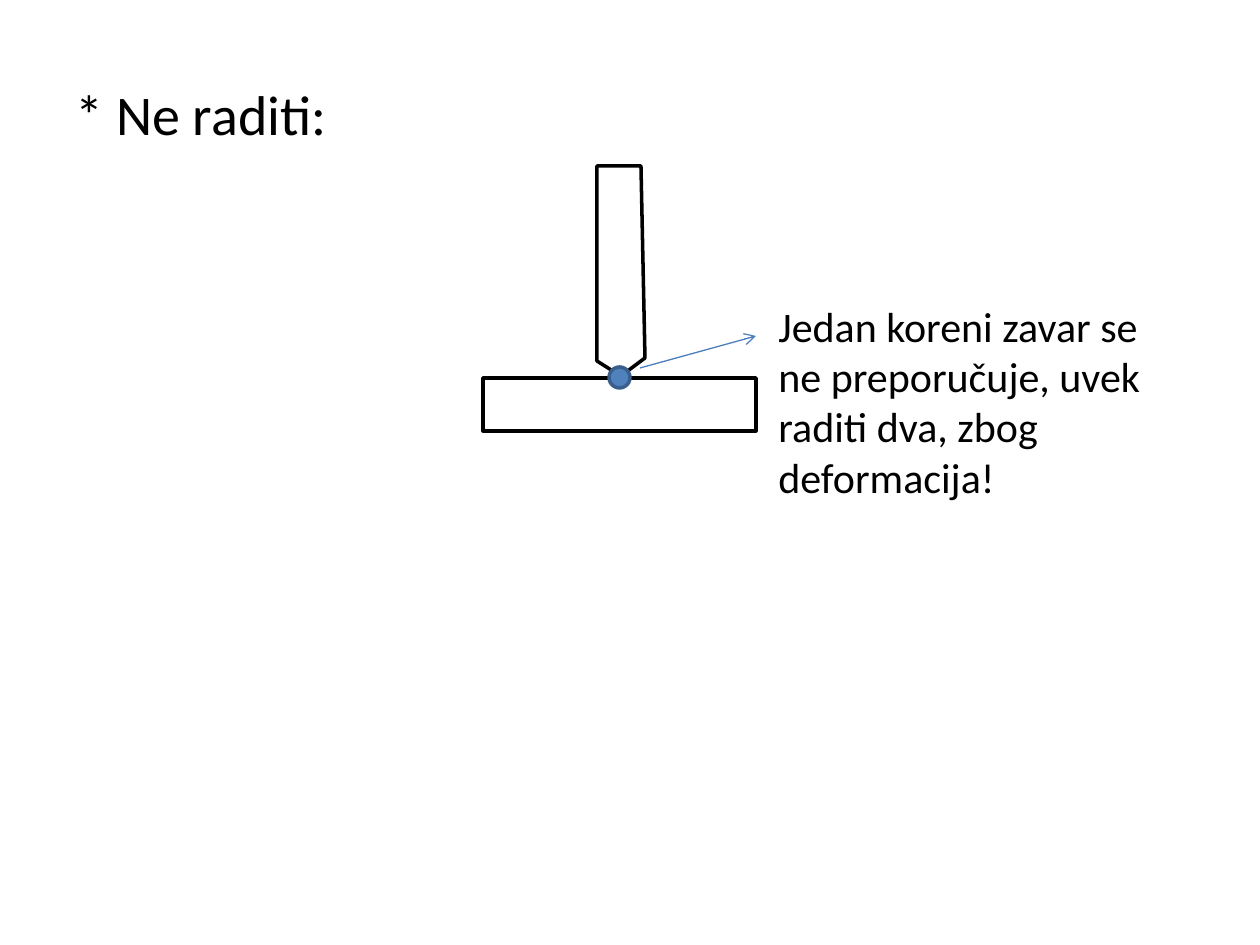
from typing import NamedTuple

from lxml.etree import SubElement
from pptx import Presentation
from pptx.dml.color import RGBColor
from pptx.enum.shapes import MSO_CONNECTOR as Connector, MSO_SHAPE as Preset
from pptx.enum.text import MSO_AUTO_SIZE as AutoSize
from pptx.oxml.ns import qn
from pptx.util import Emu, Pt

PX = 914400 / 126
FONT = "Calibri"
BLACK = RGBColor(0x00, 0x00, 0x00)
WHITE = RGBColor(0xFF, 0xFF, 0xFF)
BLUE = RGBColor(0x4F, 0x81, 0xBD)
DARK_BLUE = RGBColor(0x3A, 0x5F, 0x8C)
ARROW_BLUE = RGBColor(0x4B, 0x7E, 0xBC)


class Box(NamedTuple):
    left: int
    top: int
    width: int
    height: int


class Part(NamedTuple):
    preset: Preset
    box: Box
    fill: RGBColor
    line: RGBColor


HEADING_BOX = Box(63, 73, 1134, 771)
NOTE_BOX = Box(766, 294, 420, 217)
UPRIGHT_PLATE = [(645, 358), (625, 373), (616, 373), (597, 361), (597, 166), (641, 166)]
ARROW_START, ARROW_END = (640, 368), (756, 336)
PARTS = [
    Part(Preset.RECTANGLE, Box(483, 378, 273, 53), WHITE, BLACK),
    Part(Preset.OVAL, Box(609, 367, 21, 21), BLUE, DARK_BLUE),
]


def emu(px: float) -> Emu:
    return Emu(round(px * PX))


def emus(values) -> list[Emu]:
    return [emu(value) for value in values]


def style_shape(shape, fill: RGBColor, line: RGBColor) -> None:
    shape.shadow.inherit = False
    shape.fill.solid()
    shape.fill.fore_color.rgb = fill
    shape.line.color.rgb = line
    shape.line.width = Pt(2)


def write_text(shape, text: str, size: int) -> None:
    frame = shape.text_frame
    frame.text = text
    frame.word_wrap = True
    font = frame.paragraphs[0].runs[0].font
    font.name, font.size, font.color.rgb = FONT, Pt(size), BLACK


def add_heading(slide) -> None:
    body = slide.placeholders[1]
    body.left, body.top, body.width, body.height = emus(HEADING_BOX)
    write_text(body, "* Ne raditi:", 32)
    para = body.text_frame.paragraphs[0]
    para.space_before = Pt(6.4)
    properties = para._p.get_or_add_pPr()
    properties.set("marL", str(emu(47)))
    properties.set("indent", str(emu(-47)))
    SubElement(properties, qn("a:buNone"))


def add_upright_plate(slide) -> None:
    first, *others = UPRIGHT_PLATE
    builder = slide.shapes.build_freeform(*first, scale=PX)
    builder.add_line_segments(others, close=True)
    style_shape(builder.convert_to_shape(), WHITE, BLACK)


def add_part(slide, part: Part) -> None:
    shape = slide.shapes.add_shape(part.preset, *emus(part.box))
    style_shape(shape, part.fill, part.line)


def add_arrow(slide) -> None:
    arrow = slide.shapes.add_connector(
        Connector.STRAIGHT, *emus(ARROW_START), *emus(ARROW_END)
    )
    arrow.line.color.rgb = ARROW_BLUE
    arrow.line.width = Pt(0.75)
    SubElement(arrow.line._get_or_add_ln(), qn("a:tailEnd"), type="arrow")
    SubElement(arrow._element.spPr, qn("a:effectLst"))


def add_note(slide) -> None:
    note = slide.shapes.add_textbox(*emus(NOTE_BOX))
    write_text(
        note,
        "Jedan koreni zavar se ne preporučuje, uvek raditi dva, zbog deformacija!",
        24,
    )
    note.text_frame.auto_size = AutoSize.SHAPE_TO_FIT_TEXT


def main() -> None:
    deck = Presentation()
    deck.slide_width, deck.slide_height = emus((1260, 945))
    slide = deck.slides.add_slide(deck.slide_layouts.get_by_name("Title and Content"))
    title = slide.shapes.title._element
    title.getparent().remove(title)

    add_heading(slide)
    add_upright_plate(slide)
    for part in PARTS:
        add_part(slide, part)
    add_arrow(slide)
    add_note(slide)
    deck.save("out.pptx")


if __name__ == "__main__":
    main()
